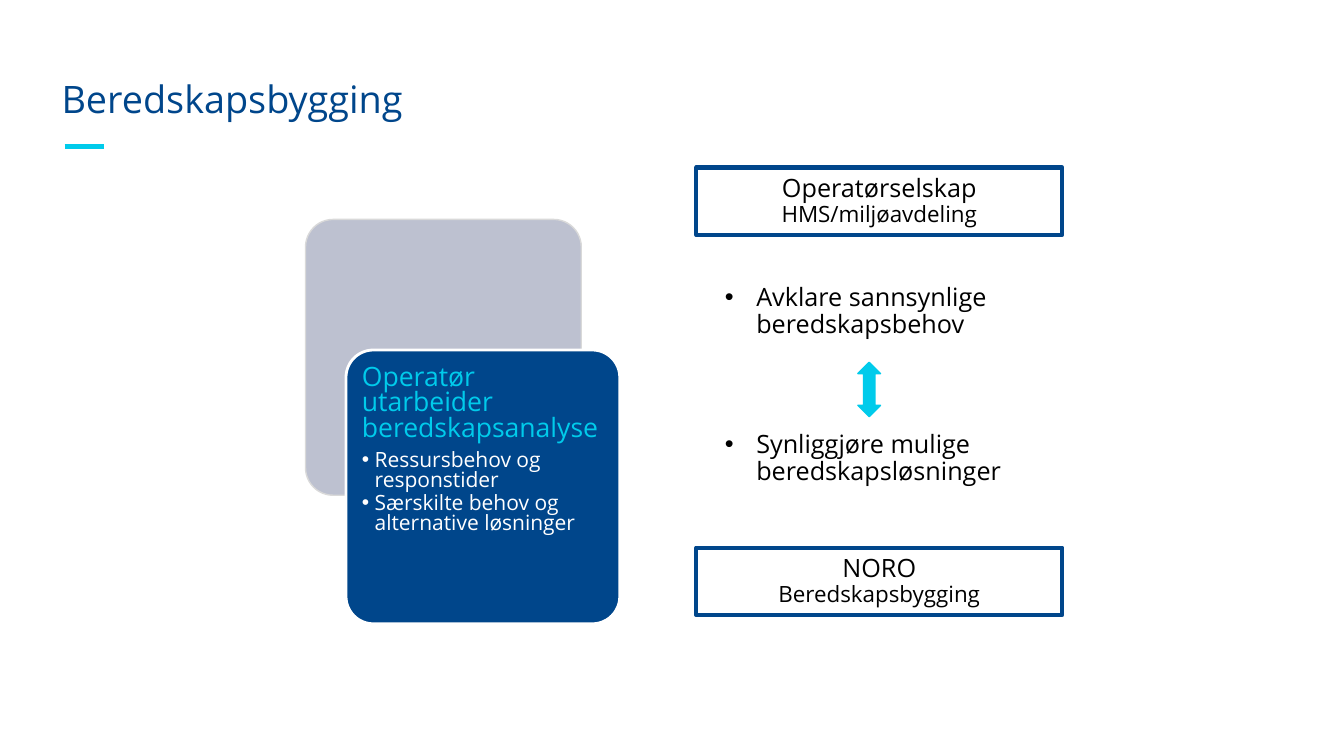
"""Build the slide on preparedness planning between operator and response body."""
from dataclasses import dataclass
from typing import Optional

import lxml.etree
import pptx
import pptx.dml.color
import pptx.enum.shapes
import pptx.enum.text
import pptx.oxml.ns
import pptx.util

Cm = pptx.util.Cm
Pt = pptx.util.Pt
RGBColor = pptx.dml.color.RGBColor
Preset = pptx.enum.shapes.MSO_SHAPE
Align = pptx.enum.text.PP_ALIGN
Anchor = pptx.enum.text.MSO_ANCHOR

NAVY = RGBColor(0x00, 0x46, 0x8B)
CYAN = RGBColor(0x00, 0xCB, 0xEB)
GREY = RGBColor(0xBD, 0xC1, 0xD0)
PALE = RGBColor(0xD9, 0xD9, 0xD9)
WHITE = RGBColor(0xFF, 0xFF, 0xFF)
BLACK = RGBColor(0x00, 0x00, 0x00)
FONT = "Open Sans"


@dataclass(frozen=True)
class Line:
    """One paragraph; indent in cm makes it a bullet."""
    text: str
    size: float
    color: RGBColor = BLACK
    spacing: float = 0.9
    before: float = 0
    after: float = 0
    indent: float = 0
    align: pptx.enum.text.PP_ALIGN = Align.LEFT


@dataclass(frozen=True)
class Block:
    """One filled shape, placed in cm."""
    preset: pptx.enum.shapes.MSO_SHAPE
    left: float
    top: float
    width: float
    height: float
    fill: RGBColor
    outline: RGBColor
    outline_width: float
    corner: Optional[float] = None
    inset: float = 0.13
    anchor: pptx.enum.text.MSO_ANCHOR = Anchor.MIDDLE
    lines: tuple[Line, ...] = ()


def set_bullet(paragraph, indent: float) -> None:
    """Give a paragraph a round bullet with a hanging indent."""
    properties = paragraph._p.get_or_add_pPr()
    properties.set("marL", str(Cm(indent)))
    properties.set("indent", str(-Cm(indent)))
    for tag, key, value in (("a:buFont", "typeface", "Arial"), ("a:buChar", "char", "•")):
        lxml.etree.SubElement(properties, pptx.oxml.ns.qn(tag)).set(key, value)


def write(frame, lines: tuple[Line, ...], inset: float, anchor) -> None:
    """Fill a text frame with formatted paragraphs."""
    frame.word_wrap = True
    frame.auto_size = pptx.enum.text.MSO_AUTO_SIZE.NONE
    frame.vertical_anchor = anchor
    frame.margin_left = frame.margin_right = Cm(inset)
    frame.margin_top = frame.margin_bottom = Cm(inset)
    frame.text = "\n".join(line.text for line in lines)
    for paragraph, line in zip(frame.paragraphs, lines):
        paragraph.alignment = line.align
        paragraph.line_spacing = line.spacing
        paragraph.space_before = Pt(line.before)
        paragraph.space_after = Pt(line.after)
        if line.indent:
            set_bullet(paragraph, line.indent)
        for run in paragraph.runs:
            run.font.name = FONT
            run.font.size = Pt(line.size)
            run.font.color.rgb = line.color


def draw_block(slide, block: Block) -> None:
    """Draw one block with its text."""
    shape = slide.shapes.add_shape(
        block.preset, Cm(block.left), Cm(block.top), Cm(block.width), Cm(block.height))
    shape.shadow.inherit = False
    shape.fill.solid()
    shape.fill.fore_color.rgb = block.fill
    shape.line.color.rgb = block.outline
    shape.line.width = Pt(block.outline_width)
    if block.corner is not None:
        shape.adjustments[0] = block.corner
    if block.lines:
        write(shape.text_frame, block.lines, block.inset, block.anchor)


def draw_title(slide) -> None:
    """Place the heading and the short accent line below it."""
    heading = slide.shapes.title
    heading.left, heading.top = Cm(1.55), Cm(1.55)
    heading.width, heading.height = Cm(30.48), Cm(1.55)
    write(heading.text_frame, (Line("Beredskapsbygging", 27, NAVY, 1.2),), 0.13, Anchor.TOP)
    heading.text_frame.margin_left = 0
    accent = slide.shapes.add_connector(
        pptx.enum.shapes.MSO_CONNECTOR.STRAIGHT, Cm(1.63), Cm(3.69), Cm(2.63), Cm(3.69))
    accent.line.color.rgb = CYAN
    accent.line.width = Pt(3)
    lxml.etree.SubElement(accent._element.spPr, pptx.oxml.ns.qn("a:effectLst"))


def party(top: float, name: str, unit: str) -> Block:
    """Describe the framed box of one party."""
    return Block(Preset.RECTANGLE, 17.55, top, 9.22, 1.7, WHITE, NAVY, 3,
                 lines=(Line(name, 18, align=Align.CENTER), Line(unit, 16, align=Align.CENTER)))


ANALYSIS = (
    Line("Operatør utarbeider beredskapsanalyse", 19, CYAN, 0.8, after=6.5),
    Line("Ressursbehov og responstider", 15, WHITE, 0.8, after=2, indent=0.32),
    Line("Særskilte behov og alternative løsninger", 15, WHITE, 0.8, after=2, indent=0.32),
)
BLOCKS = (
    Block(Preset.ROUNDED_RECTANGLE, 7.7, 5.53, 6.95, 6.95, GREY, PALE, 1, corner=0.1),
    Block(Preset.ROUNDED_RECTANGLE, 8.72, 8.82, 6.9, 6.9, NAVY, WHITE, 2,
          corner=0.1, inset=0.2, anchor=Anchor.TOP, lines=ANALYSIS),
    party(4.22, "Operatørselskap", "HMS/miljøavdeling"),
    party(13.8, "NORO", "Beredskapsbygging"),
    Block(Preset.UP_DOWN_ARROW, 21.62, 9.13, 0.57, 1.37, CYAN, CYAN, 1),
)
TASKS = (
    Line("Avklare sannsynlige beredskapsbehov", 18, indent=0.79),
    Line("Synliggjøre mulige beredskapsløsninger", 18, before=66, indent=0.79),
)


def main() -> None:
    """Assemble and save the slide."""
    deck = pptx.Presentation()
    deck.slide_width, deck.slide_height = Cm(33.87), Cm(19.05)
    slide = deck.slides.add_slide(deck.slide_layouts[5])
    draw_title(slide)
    for block in BLOCKS:
        draw_block(slide, block)
    tasks = slide.shapes.add_textbox(Cm(18.14), Cm(7.04), Cm(8.08), Cm(5.64))
    write(tasks.text_frame, TASKS, 0.13, Anchor.TOP)
    deck.save("out.pptx")


if __name__ == "__main__":
    main()
